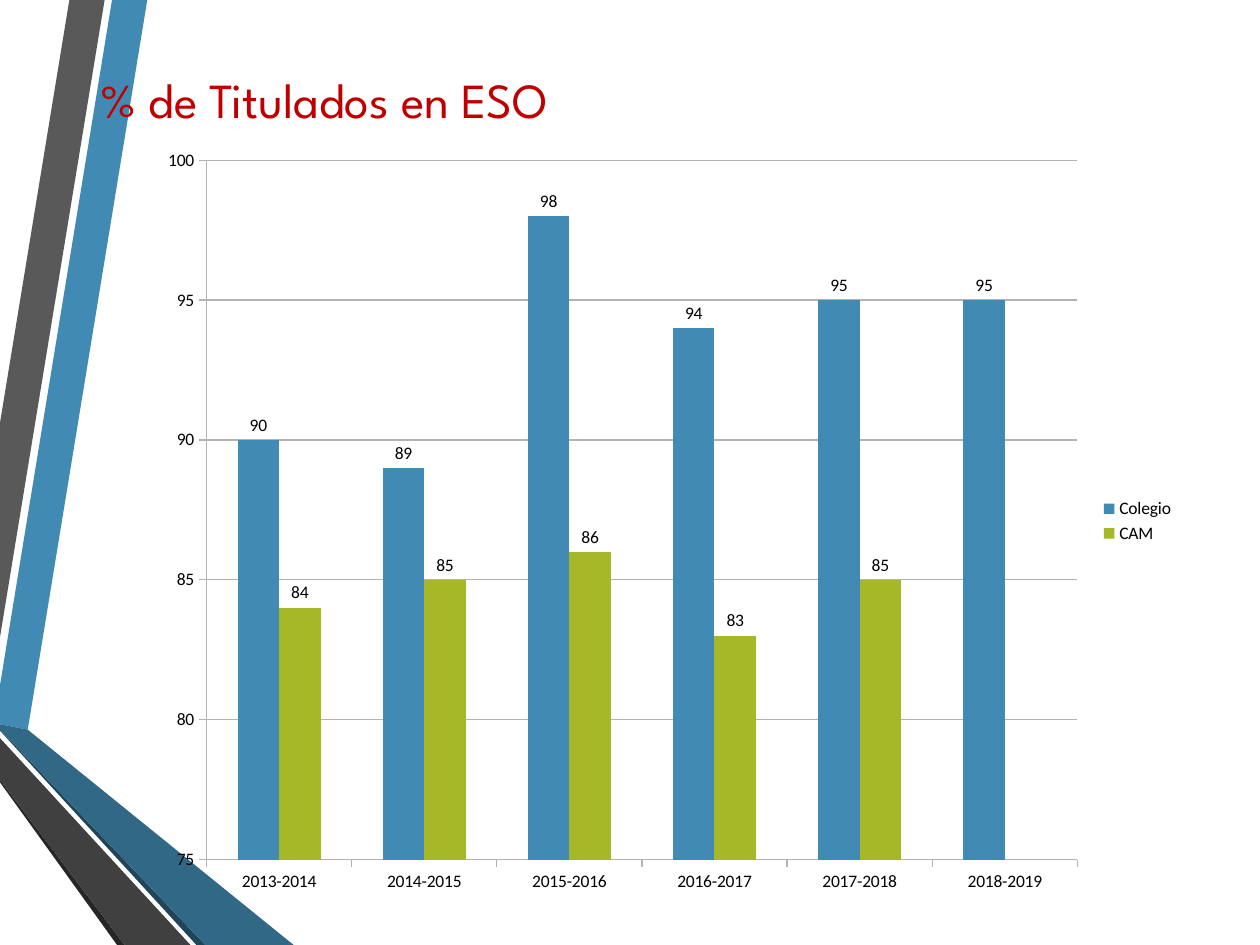
from pptx import Presentation
from pptx import util as u
from pptx.chart.data import CategoryChartData
from pptx.dml.color import RGBColor
from pptx.enum import chart as ch

WIDE, HIGH = 25.4, 19.05
BLUE, GREEN, GRID = "418AB3", "A6B727", "B3B3B3"

# Ribbons from back to front: colour and corners in cm
BANDS = [
    (BLUE, [(0, 13.82), (0, 14.6), (0.56, 14.71), (2.97, 0), (2.26, 0)]),
    ("595959", [(2.11, 0), (1.4, 0), (0, 8.53), (0, 12.85)]),
    ("262626", [(0, 15.72), (0, 15.77), (2.36, HIGH), (2.51, HIGH)]),
    ("20455A", [(0, 14.71), (0, 14.73), (3.96, HIGH), (4.14, HIGH)]),
    ("316886", [(0, 14.71), (4.14, HIGH), (5.92, HIGH), (0.56, 14.71), (0, 14.6)]),
    ("404040", [(0, 15.72), (2.51, HIGH), (3.84, HIGH), (0, 14.88)]),
]
YEARS = [f"{y}-{y + 1}" for y in range(2013, 2019)]
RATES = [
    ("Colegio", BLUE, [90, 89, 98, 94, 95, 95]),
    ("CAM", GREEN, [84, 85, 86, 83, 85, None]),
]


def tint(fill, color):
    fill.solid()
    fill.fore_color.rgb = RGBColor.from_string(color)


def style(font, name, size, color):
    font.name = name
    font.size = u.Pt(size)
    font.color.rgb = RGBColor.from_string(color)


def add_band(slide, color, points):
    first, *rest = [(u.Cm(x), u.Cm(y)) for x, y in points]
    path = slide.shapes.build_freeform(*first)
    path.add_line_segments(rest, close=True)
    band = path.convert_to_shape()
    band.shadow.inherit = False
    tint(band.fill, color)
    band.line.fill.background()


def add_title(slide, words):
    box = slide.shapes.add_textbox(u.Cm(1.47), u.Cm(1.27), u.Cm(12.07), u.Cm(1.45))
    box.text_frame.word_wrap = True
    para = box.text_frame.paragraphs[0]
    para.text = words
    para.space_before = u.Pt(3)
    props = para._p.get_or_add_pPr()
    props.set("marL", str(u.Cm(1.02)))
    props.set("indent", str(u.Cm(-0.71)))
    style(para.font, "League Spartan", 28, "C00000")


def style_axis(axis):
    axis.major_tick_mark = ch.XL_TICK_MARK.OUTSIDE
    axis.minor_tick_mark = ch.XL_TICK_MARK.NONE
    axis.format.line.color.rgb = RGBColor.from_string(GRID)
    axis.format.line.width = u.Pt(0.75)


def add_bars(slide):
    data = CategoryChartData()
    data.categories = YEARS
    for name, _, vals in RATES:
        data.add_series(name, vals)
    chart = slide.shapes.add_chart(
        ch.XL_CHART_TYPE.COLUMN_CLUSTERED,
        u.Cm(2.97), u.Cm(2.72), u.Cm(20.96), u.Cm(15.57), data).chart
    style(chart.font, "Calibri", 10, "000000")
    chart.has_title = False

    # Legend and axes
    chart.has_legend = True
    chart.legend.position = ch.XL_LEGEND_POSITION.RIGHT
    chart.legend.include_in_layout = False
    style_axis(chart.category_axis)
    axis = chart.value_axis
    style_axis(axis)
    axis.minimum_scale, axis.maximum_scale, axis.major_unit = 75, 100, 5
    axis.has_major_gridlines = True
    line = axis.major_gridlines.format.line
    line.color.rgb = RGBColor.from_string(GRID)
    line.width = u.Pt(0.75)

    # Columns with their values
    plot = chart.plots[0]
    plot.gap_width, plot.overlap = 150, 0
    plot.vary_by_categories = False
    for bars, (_, color, _) in zip(plot.series, RATES):
        tint(bars.format.fill, color)
        bars.invert_if_negative = False
        bars.data_labels.show_value = True
        bars.data_labels.position = ch.XL_LABEL_POSITION.OUTSIDE_END


def main():
    deck = Presentation()
    deck.slide_width, deck.slide_height = u.Cm(WIDE), u.Cm(HIGH)
    slide = deck.slides.add_slide(deck.slide_layouts[6])
    for color, points in BANDS:
        add_band(slide, color, points)
    add_title(slide, "% de Titulados en ESO")
    add_bars(slide)
    deck.save("out.pptx")


if __name__ == "__main__":
    main()
